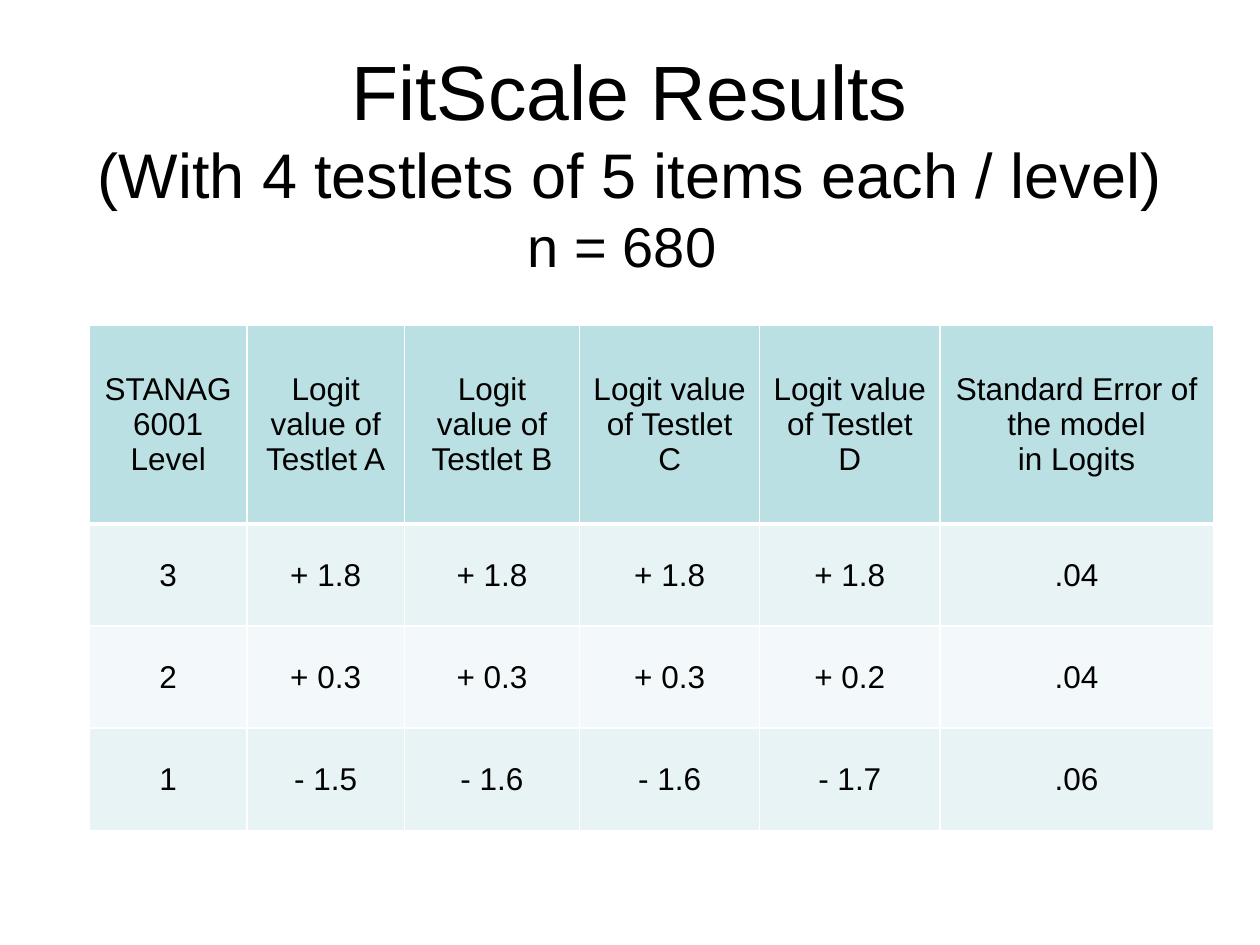
from lxml import etree
from pptx import Presentation
from pptx.dml.color import RGBColor
from pptx.enum import text
from pptx.oxml import ns
from pptx.util import Inches, Pt

HUE = {"ink": "000000", "head": "BBE0E3", "odd": "E7F3F4",
       "even": "F3F9FA", "rule": "FFFFFF"}
FONT = "Arial"

deck = Presentation()
deck.slide_width, deck.slide_height = Inches(10), Inches(7.5)
wide, high = deck.slide_width, deck.slide_height
slide = deck.slides.add_slide(deck.slide_layouts[6])


def put(para, words, size):
    para.alignment = text.PP_ALIGN.CENTER
    run = para.add_run()
    run.text = words
    run.font.size, run.font.name = Pt(size), FONT
    run.font.color.rgb = RGBColor.from_string(HUE["ink"])


def edge(cell, side, width):
    line = etree.SubElement(cell._tc.get_or_add_tcPr(),
                            ns.qn("a:ln" + side), w=str(Pt(width)))
    fill = etree.SubElement(line, ns.qn("a:solidFill"))
    etree.SubElement(fill, ns.qn("a:srgbClr"), val=HUE["rule"])


# Title: one paragraph of three lines, each smaller than the last
box = slide.shapes.add_textbox(int(wide * 0.05), int(high * 0.04),
                               int(wide * 0.9), int(high * 0.26))
frame = box.text_frame
frame.word_wrap = True
frame.vertical_anchor = text.MSO_ANCHOR.MIDDLE
para = frame.paragraphs[0]
put(para, "FitScale Results", 44)
para.add_line_break()
put(para, "(With 4 testlets of 5 items each / level)", 36)
para.add_line_break()
put(para, "n = 680 ", 32)

# Table content
rows = [
    ["STANAG 6001 Level"]
    + [f"Logit value of Testlet {name}" for name in "ABCD"]
    + ["Standard Error of the model\nin Logits"],
    ["3", "+ 1.8", "+ 1.8", "+ 1.8", "+ 1.8", ".04"],
    ["2", "+ 0.3", "+ 0.3", "+ 0.3", "+ 0.2", ".04"],
    ["1", "- 1.5", "- 1.6", "- 1.6", "- 1.7", ".06"],
]
tints = ["head", "odd", "even", "odd"]

# Table grid, in inches
cols = [1.25, 1.25, 1.39, 1.43, 1.43, 2.17]
tall = [1.58] + [0.81] * 3
grid = slide.shapes.add_table(
    len(tall), len(cols), Inches(0.71), Inches(2.58),
    Inches(sum(cols)), Inches(sum(tall))).table
grid.first_row = grid.horz_banding = False
for col, size in zip(grid.columns, cols):
    col.width = Inches(size)
for row, size in zip(grid.rows, tall):
    row.height = Inches(size)

# Cells: borders come before the fill in the cell's XML
for r, (row, tint) in enumerate(zip(rows, tints)):
    for c, words in enumerate(row):
        cell = grid.cell(r, c)
        for side in "LRTB":
            edge(cell, side, 3 if r == 0 and side == "B" else 1)
        cell.fill.solid()
        cell.fill.fore_color.rgb = RGBColor.from_string(HUE[tint])
        cell.vertical_anchor = text.MSO_ANCHOR.MIDDLE
        for i, part in enumerate(words.split("\n")):
            body = cell.text_frame
            put(body.add_paragraph() if i else body.paragraphs[0], part, 18)

deck.save("out.pptx")
